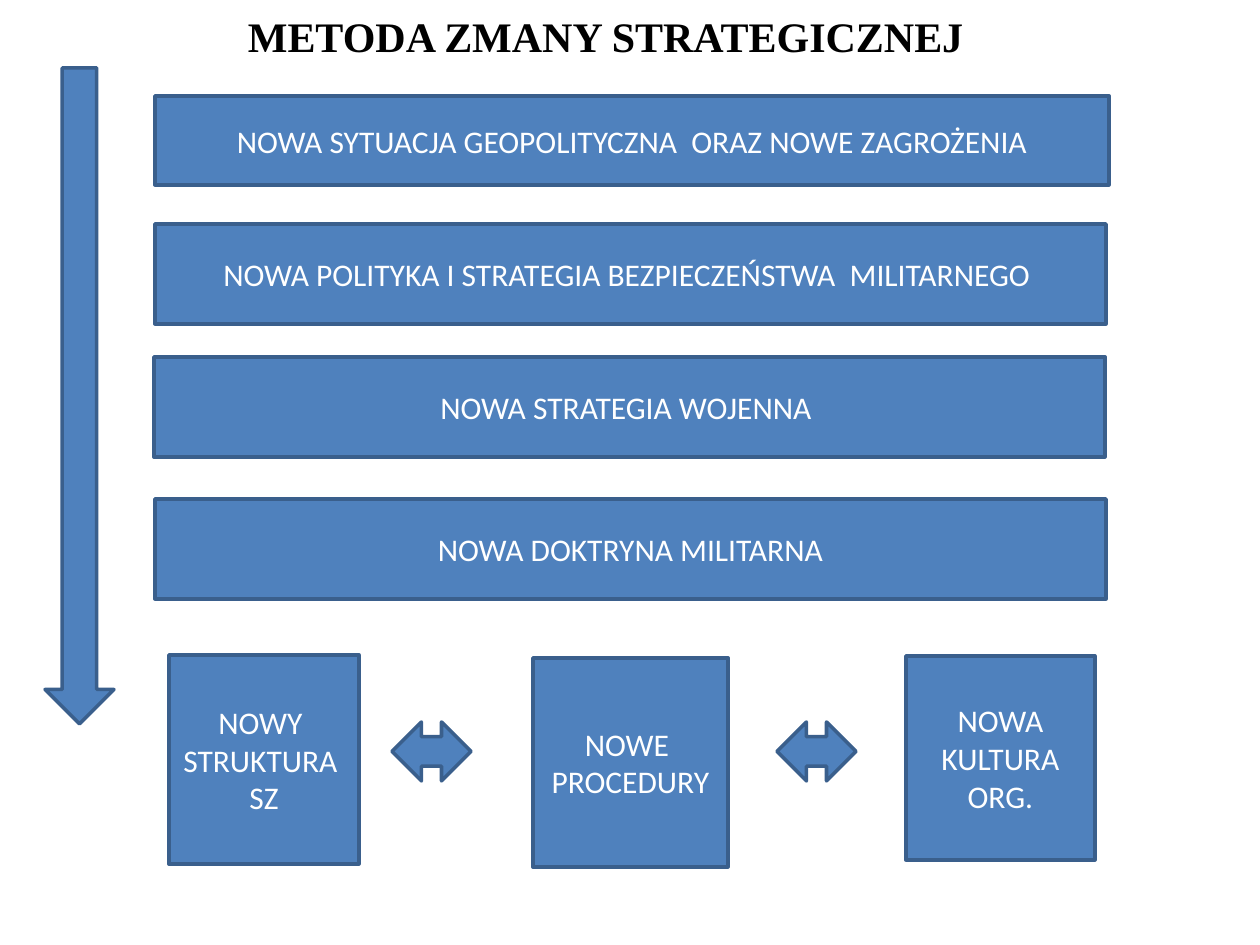
from pptx import Presentation
from pptx.dml.color import RGBColor
from pptx.enum.shapes import MSO_SHAPE as Shape
from pptx.enum.text import MSO_ANCHOR as Anchor, PP_ALIGN as Align
from pptx.util import Pt

PX = 914400 // 126
COLORS = {"fill": "4F81BD", "line": "3A5F8C", "label": "FFFFFF", "title": "000000"}

# Label, then box relative to its region
BARS = [
    ("NOWA SYTUACJA GEOPOLITYCZNA  ORAZ NOWE ZAGROŻENIA", (1, 0, 954, 89)),
    ("NOWA POLITYKA I STRATEGIA BEZPIECZEŃSTWA  MILITARNEGO ", (1, 128, 951, 100)),
    ("NOWA STRATEGIA WOJENNA ", (0, 261, 951, 100)),
    ("NOWA DOKTRYNA MILITARNA", (1, 403, 951, 100)),
]
TILES = [
    ("NOWY  STRUKTURA  SZ", (0, 0, 190, 209)),
    ("NOWE  PROCEDURY", (364, 3, 195, 209)),
    ("NOWA KULTURA\nORG.", (737, 1, 189, 204)),
]


def color(name):
    return RGBColor.from_string(COLORS[name])


def place(box, region=(0, 0)):
    left, top, width, height = box
    return [v * PX for v in (left + region[0], top + region[1], width, height)]


def style_text(frame, text, font_name, size, color_name, bold=False):
    frame.text = text
    frame.word_wrap = True
    for paragraph in frame.paragraphs:
        paragraph.alignment = Align.CENTER
        font = paragraph.font
        font.name, font.size, font.bold = font_name, Pt(size), bold
        font.color.rgb = color(color_name)


def add_block(slide, kind, box, region=(0, 0), text=""):
    shape = slide.shapes.add_shape(kind, *place(box, region))
    shape.shadow.inherit = False
    shape.fill.solid()
    shape.fill.fore_color.rgb = color("fill")
    shape.line.color.rgb = color("line")
    shape.line.width = Pt(2)
    if text:
        shape.text_frame.vertical_anchor = Anchor.MIDDLE
        style_text(shape.text_frame, text, "Calibri", 18, "label")


def add_title(slide, box):
    title = slide.shapes.title
    title.left, title.top, title.width, title.height = place(box)
    title.text_frame.vertical_anchor = Anchor.TOP
    style_text(title.text_frame, "METODA ZMANY STRATEGICZNEJ ",
               "Times New Roman", 24, "title", bold=True)


def add_bars(slide, region):
    for text, box in BARS:
        add_block(slide, Shape.RECTANGLE, box, region, text)


def add_tiles(slide, region):
    for text, box in TILES:
        add_block(slide, Shape.RECTANGLE, box, region, text)
    # Double arrows between the tiles
    for left in (223, 608):
        add_block(slide, Shape.LEFT_RIGHT_ARROW, (left, 67, 79, 59), region)


def main():
    presentation = Presentation()
    presentation.slide_width, presentation.slide_height = 1260 * PX, 945 * PX
    slide = presentation.slides.add_slide(presentation.slide_layouts[5])
    add_title(slide, (115, 4, 992, 63))
    add_bars(slide, (154, 96))
    add_tiles(slide, (169, 655))
    # Direction of change
    add_block(slide, Shape.DOWN_ARROW, (45, 68, 69, 656))
    presentation.save("out.pptx")


if __name__ == "__main__":
    main()
